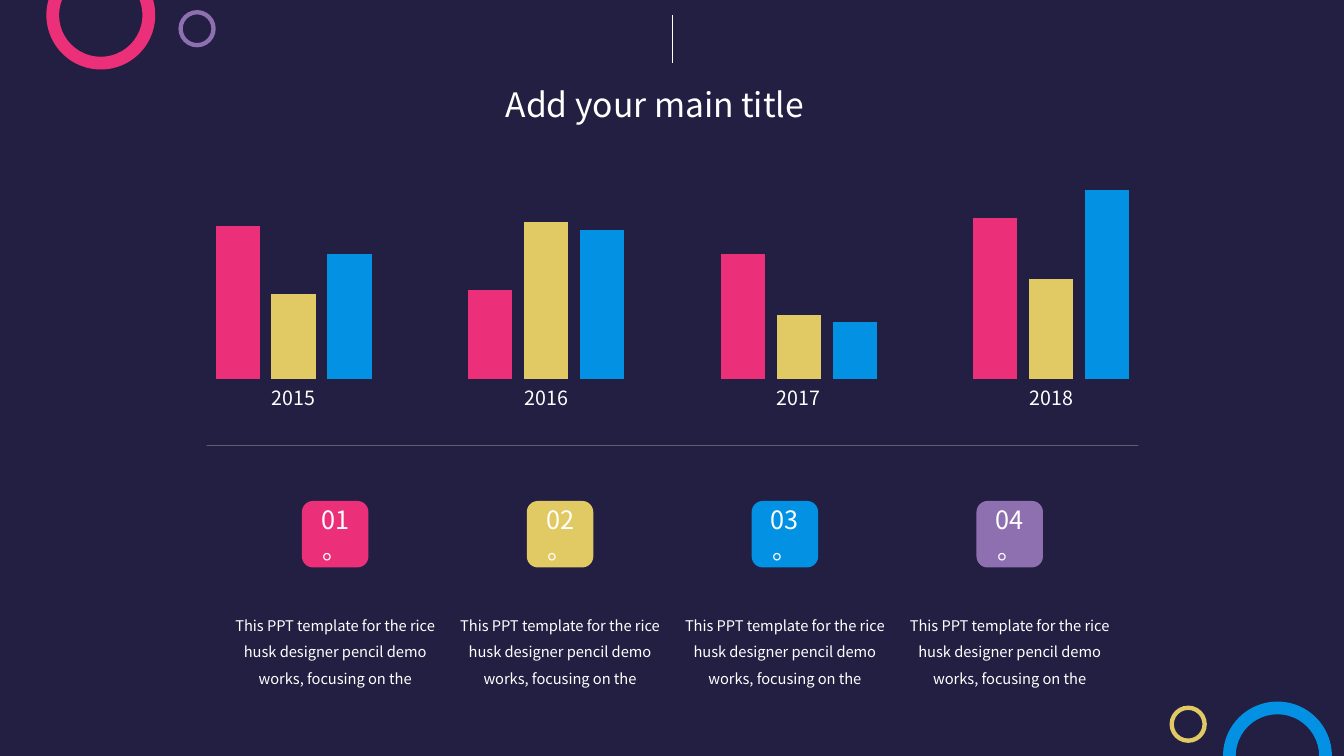
import pptx
import pptx.chart.data
import pptx.dml.color
import pptx.enum.chart
import pptx.enum.shapes
import pptx.enum.text
import pptx.oxml.ns
import pptx.util
from lxml import etree

Inches = pptx.util.Inches
SHAPES = pptx.enum.shapes.MSO_SHAPE
FONT = "Noto Sans CJK SC"
COLORS = {
    "navy": "221F42", "white": "FFFFFF", "pink": "EB3079",
    "gold": "E1C963", "blue": "0392E3", "purple": "8E6FB0",
}
CAPTION = "This PPT template for the rice husk designer pencil demo works, focusing on the"
YEARS = ["2015", "2016", "2017", "2018"]
SERIES = [
    ("Series 1", "pink", [81, 47, 66, 85]),
    ("Series 2", "gold", [45, 83, 34, 53]),
    ("Series 3", "blue", [66, 79, 30, 100]),
]
RINGS = [
    ("pink", 0.46, -0.39, 1.08), ("blue", 12.13, 6.96, 1.08),
    ("purple", 1.77, 0.1, 0.37), ("gold", 11.6, 7, 0.37),
]
TILE_COLORS = ["pink", "gold", "blue", "purple"]


def color(name):
    """Return the named colour as an RGB value."""
    return pptx.dml.color.RGBColor.from_string(COLORS[name])


def apply_format(target, values):
    """Set each named attribute on the target."""
    for name, value in values.items():
        setattr(target, name, value)


def add_child(parent, tag, **attributes):
    """Append a DrawingML element with the given attributes."""
    return etree.SubElement(parent, pptx.oxml.ns.qn(tag), attributes)


def style_font(font, size):
    """Give a font the slide's typeface, a size and white."""
    apply_format(font, {"name": FONT, "size": pptx.util.Pt(size)})
    font.color.rgb = color("white")


def write(box, text, size, spacing=None):
    """Write one centred paragraph into a box."""
    box.text_frame.word_wrap = True
    para = box.text_frame.paragraphs[0]
    apply_format(para, {"alignment": pptx.enum.text.PP_ALIGN.CENTER, "line_spacing": spacing})
    span = para.add_run()
    span.text = text
    style_font(span.font, size)
    add_child(span.font._element, "a:ea", typeface=FONT)


def add_filled(page, kind, fill, left, top, width, height):
    """Add a flat preset shape without outline."""
    shape = page.shapes.add_shape(kind, Inches(left), Inches(top), Inches(width), Inches(height))
    shape.shadow.inherit = False
    shape.fill.solid()
    shape.fill.fore_color.rgb = color(fill)
    shape.line.fill.background()
    return shape


def add_text(page, text, size, left, top, width, height, spacing=None):
    """Add a text box that grows with its text."""
    box = page.shapes.add_textbox(Inches(left), Inches(top), Inches(width), Inches(height))
    box.text_frame.auto_size = pptx.enum.text.MSO_AUTO_SIZE.SHAPE_TO_FIT_TEXT
    write(box, text, size, spacing)


def add_rule(page, left, top, right, bottom, opacity=100):
    """Add a thin white line of the given opacity in percent."""
    rule = page.shapes.add_connector(
        pptx.enum.shapes.MSO_CONNECTOR.STRAIGHT,
        Inches(left), Inches(top), Inches(right), Inches(bottom))
    rule.line.width = pptx.util.Pt(0.5)
    rule.line.color.rgb = color("white")
    if opacity < 100:
        tone = rule._element.spPr.find(".//" + pptx.oxml.ns.qn("a:srgbClr"))
        add_child(tone, "a:alpha", val=str(opacity * 1000))
    add_child(rule._element.spPr, "a:effectLst")


def add_backdrop(page, width, height):
    """Fill the page and place the rings in its corners."""
    add_filled(page, SHAPES.RECTANGLE, "navy", 0, 0, width, height)
    for fill, left, top, size in RINGS:
        ring = add_filled(page, SHAPES.DONUT, fill, left, top, size, size)
        ring.adjustments[0] = 0.117


def add_heading(page, left, top, width, height):
    """Add the title with the short upright line above it."""
    add_rule(page, 6.67, top - 0.63, 6.67, top - 0.15)
    add_text(page, "Add your main title", 24, left, top, width, height)


def add_yearly_chart(page, left, top, width, height):
    """Add the clustered columns by year."""
    data = pptx.chart.data.CategoryChartData()
    data.categories = YEARS
    for name, _, values in SERIES:
        data.add_series(name, values)
    chart = page.shapes.add_chart(
        pptx.enum.chart.XL_CHART_TYPE.COLUMN_CLUSTERED,
        Inches(left), Inches(top), Inches(width), Inches(height), data).chart
    apply_format(chart, {"has_legend": False, "has_title": False})
    style_font(chart.font, 14)
    apply_format(chart.value_axis, {
        "visible": False, "has_major_gridlines": False,
        "minimum_scale": 0, "maximum_scale": 113})
    no_tick = pptx.enum.chart.XL_TICK_MARK.NONE
    apply_format(chart.category_axis, {"major_tick_mark": no_tick, "minor_tick_mark": no_tick})
    chart.category_axis.format.line.fill.background()
    plot = chart.plots[0]
    apply_format(plot, {"gap_width": 219, "overlap": -27, "vary_by_categories": False})
    for series, (_, fill, _) in zip(plot.series, SERIES):
        series.format.fill.solid()
        series.format.fill.fore_color.rgb = color(fill)


def add_point(page, number, fill, left, top, width):
    """Add a numbered tile with its caption centred below."""
    size = 0.66
    tile = add_filled(page, SHAPES.ROUNDED_RECTANGLE, fill,
                      left + (width - size) / 2, top, size, size)
    tile.text_frame.vertical_anchor = pptx.enum.text.MSO_ANCHOR.MIDDLE
    write(tile, f"{number:02d}。", 18)
    add_text(page, CAPTION, 10.5, left, top + 1.01, width, 1.13, spacing=1.5)


def add_points(page, left, top, step):
    """Add the row of numbered points at equal steps."""
    for index, fill in enumerate(TILE_COLORS):
        add_point(page, index + 1, fill, left + index * step, top, 2.21)


def main():
    """Build the slide and save it."""
    deck = pptx.Presentation()
    apply_format(deck, {"slide_width": Inches(13.33), "slide_height": Inches(7.5)})
    page = deck.slides.add_slide(deck.slide_layouts[6])
    add_backdrop(page, 13.33, 7.5)
    add_heading(page, 4.7, 0.78, 3.59, 0.5)
    add_yearly_chart(page, 1.45, 1.59, 10.44, 2.54)
    add_rule(page, 2.05, 4.42, 11.29, 4.42, opacity=28)
    add_points(page, 2.22, 4.97, 2.23)
    deck.save("out.pptx")


if __name__ == "__main__":
    main()
